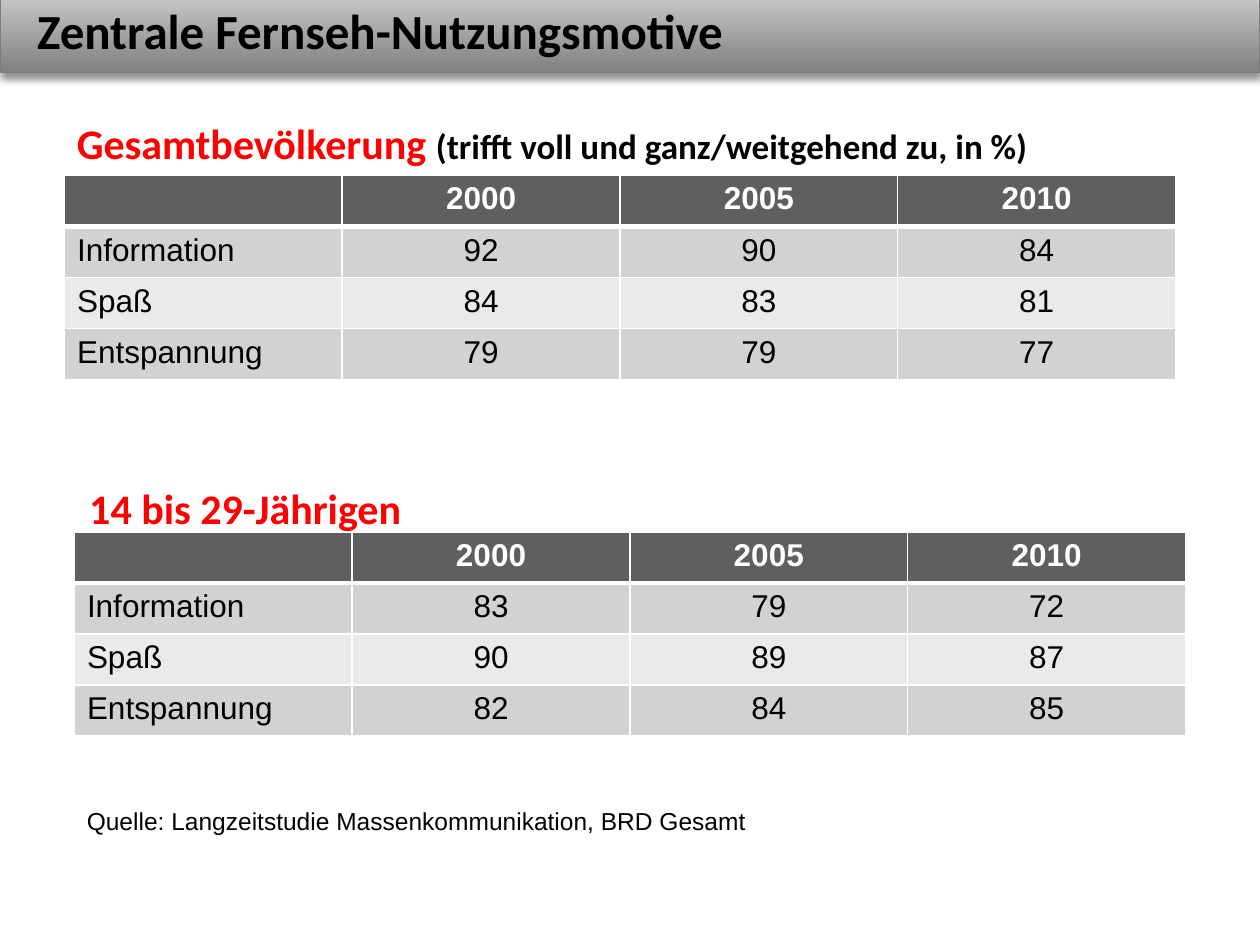
from lxml import etree
from pptx import Presentation
from pptx.dml.color import RGBColor
from pptx.enum import shapes, text
from pptx.oxml import parse_xml
from pptx.oxml.ns import nsdecls
from pptx.util import Cm, Pt

BLACK, WHITE, RED = "000000", "FFFFFF", "FF0000"
HEADER_FILL, ROW_FILLS = "5F5F5F", ("D2D2D2", "EAEAEA")
YEARS = ["2000", "2005", "2010"]
MOTIVES = ["Information", "Spaß", "Entspannung"]


def color(hex_code):
    return RGBColor.from_string(hex_code)


def format_run(run, size, hex_code, bold=False, font="Calibri"):
    run.font.name = font
    run.font.size = Pt(size)
    run.font.bold = bold
    run.font.color.rgb = color(hex_code)


def add_label(slide, box, parts, anchor=text.MSO_ANCHOR.TOP):
    """Place one line of text; parts holds (wording, size, colour, bold, font)."""
    frame = slide.shapes.add_textbox(*map(Cm, box)).text_frame
    frame.word_wrap = True
    frame.vertical_anchor = anchor
    for wording, *style in parts:
        run = frame.paragraphs[0].add_run()
        run.text = wording
        format_run(run, *style)


def add_title_band(slide, box):
    left, top, width, height = box
    band = slide.shapes.add_shape(shapes.MSO_SHAPE.RECTANGLE, *map(Cm, box))
    band.fill.gradient()
    band.fill.gradient_angle = 90
    for stop, position, shade in zip(band.fill.gradient_stops, (0, 1), ("808080", "CDCDCD")):
        stop.position = position
        stop.color.rgb = color(shade)
    band.line.color.rgb = color("7D7D7D")
    band.line.width = Pt(0.75)
    band.shadow.inherit = False
    effects = band.element.spPr.find("{*}effectLst")
    effects.append(parse_xml(
        f'<a:outerShdw {nsdecls("a")} blurRad="{Pt(4)}" dist="{Pt(3)}" dir="5400000" '
        'rotWithShape="0"><a:srgbClr val="000000"><a:alpha val="43000"/></a:srgbClr></a:outerShdw>'))
    add_label(slide, (left + 0.5, top + 0.2, width - 0.9, 1.2),
              [("Zentrale Fernseh-Nutzungsmotive", 28, BLACK, True)], text.MSO_ANCHOR.MIDDLE)


def set_borders(cell, widths):
    """Draw white borders; widths maps the sides L, R, T, B in that order to points."""
    properties = cell._tc.get_or_add_tcPr()
    for side, width in widths.items():
        properties.append(etree.fromstring(
            f'<a:ln{side} {nsdecls("a")} w="{Pt(width)}"><a:solidFill>'
            f'<a:srgbClr val="{WHITE}"/></a:solidFill></a:ln{side}>'))


def add_motive_table(slide, box, shares):
    rows = [["", *YEARS]] + [[motive, *values] for motive, values in zip(MOTIVES, shares)]
    table = slide.shapes.add_table(len(rows), len(rows[0]), *map(Cm, box)).table
    for r, row in enumerate(rows):
        header = r == 0
        for c, value in enumerate(row):
            cell = table.cell(r, c)
            set_borders(cell, {"L": 1, "R": 1, "T": 3 if r == 1 else 1, "B": 3 if header else 1})
            cell.fill.solid()
            cell.fill.fore_color.rgb = color(HEADER_FILL if header else ROW_FILLS[(r - 1) % 2])
            paragraph = cell.text_frame.paragraphs[0]
            paragraph.text = str(value)
            if c:
                paragraph.alignment = text.PP_ALIGN.CENTER
            for run in paragraph.runs:
                format_run(run, 18, WHITE if header else BLACK, header, "Arial")


def main():
    deck = Presentation()
    deck.slide_width, deck.slide_height = Cm(25.4), Cm(19.05)
    slide = deck.slides.add_slide(deck.slide_layouts[6])

    add_title_band(slide, (0, -0.2, 25.4, 1.67))

    add_motive_table(slide, (1.3, 3.53, 22.4, 4.12), [(92, 90, 84), (84, 83, 81), (79, 79, 77)])
    add_label(slide, (1.3, 2.24, 23.2, 1.28), [
        ("Gesamtbevölkerung ", 24, RED, True),
        ("(trifft voll und ganz/weitgehend zu, in %)", 20, BLACK, True)])

    add_motive_table(slide, (1.5, 10.72, 22.4, 4.12), [(83, 79, 72), (90, 89, 87), (82, 84, 85)])
    add_label(slide, (1.55, 9.6, 20, 1.28), [("14 bis 29-Jährigen", 24, RED, True)])

    add_label(slide, (1.5, 16.13, 17.2, 0.86), [
        ("Quelle: Langzeitstudie Massenkommunikation, BRD Gesamt", 14, BLACK, False, "Arial")])

    deck.save("out.pptx")


if __name__ == "__main__":
    main()
